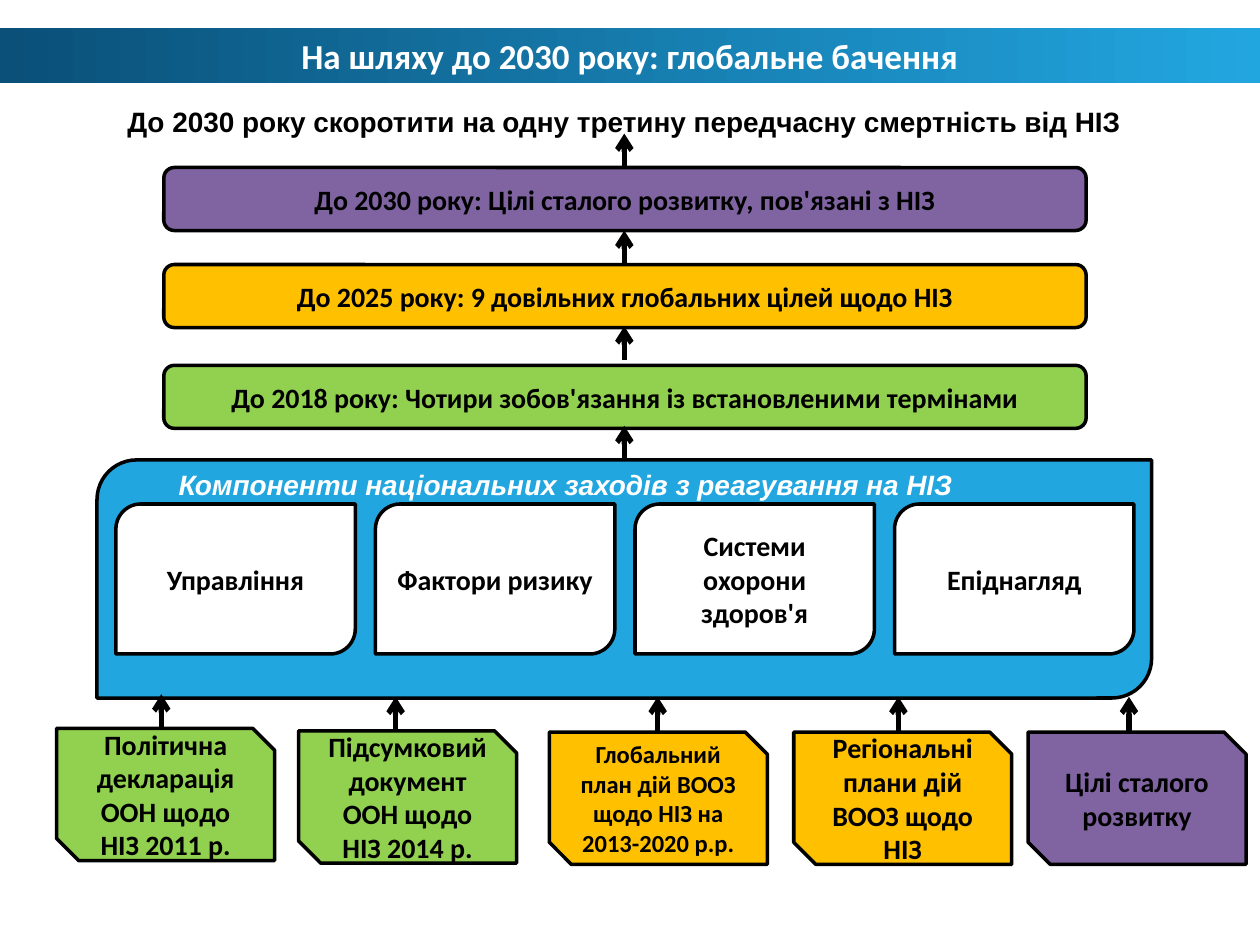
import dataclasses

import pptx
import pptx.dml.color
import pptx.enum.dml
import pptx.enum.shapes
import pptx.enum.text
import pptx.oxml
import pptx.util
from pptx.util import Inches

SHAPES = pptx.enum.shapes.MSO_SHAPE
ALIGN = pptx.enum.text.PP_ALIGN


@dataclasses.dataclass(frozen=True)
class Theme:
    """Colours, fonts and type sizes of the slide."""
    black: str = "000000"
    white: str = "FFFFFF"
    navy: str = "0A5079"
    blue: str = "22A6E0"
    purple: str = "8064A2"
    amber: str = "FFC000"
    green: str = "92D050"
    body_font: str = "Calibri"
    heading_font: str = "Arial"
    title_size: int = 20
    body_size: int = 16
    small_size: int = 14
    outline: int = 2
    arrow: int = 3


@dataclasses.dataclass(frozen=True)
class Box:
    """A rectangle in inches."""
    left: float
    top: float
    width: float
    height: float

    def inside(self, left, top, width, height):
        """Return a box offset from this one's top left corner."""
        return Box(self.left + left, self.top + top, width, height)

    def lengths(self):
        """Return the four measures as slide lengths."""
        return [Inches(value) for value in dataclasses.astuple(self)]


THEME = Theme()


def rgb(value):
    """Turn a hex string into a colour."""
    return pptx.dml.color.RGBColor.from_string(value)


def write(shape, text, size=THEME.body_size, font=THEME.body_font,
          color=THEME.black, align=ALIGN.CENTER, italic=None, wrap=True):
    """Set and format one bold paragraph in a shape."""
    frame = shape.text_frame
    frame.text = text
    frame.word_wrap = wrap
    paragraph = frame.paragraphs[0]
    paragraph.alignment = align
    run_font = paragraph.runs[0].font
    run_font.name, run_font.size = font, pptx.util.Pt(size)
    run_font.bold, run_font.italic = True, italic
    run_font.color.rgb = rgb(color)


def add_block(slide, kind, box, fill, text="", size=THEME.body_size):
    """Add an outlined shape with centred text."""
    shape = slide.shapes.add_shape(kind, *box.lengths())
    shape.shadow.inherit = False
    shape.fill.solid()
    shape.fill.fore_color.rgb = rgb(fill)
    shape.line.color.rgb = rgb(THEME.black)
    shape.line.width = pptx.util.Pt(THEME.outline)
    if text:
        write(shape, text, size)
        shape.text_frame.vertical_anchor = pptx.enum.text.MSO_ANCHOR.MIDDLE


def add_arrow(slide, x, bottom, length=0.27):
    """Add an upward arrow that starts at the given bottom point."""
    connector = slide.shapes.add_connector(
        pptx.enum.shapes.MSO_CONNECTOR.STRAIGHT,
        Inches(x), Inches(bottom), Inches(x), Inches(bottom - length))
    connector.line.color.rgb = rgb(THEME.black)
    connector.line.width = pptx.util.Pt(THEME.arrow)
    namespace = 'xmlns:a="http://schemas.openxmlformats.org/drawingml/2006/main"'
    connector.line._get_or_add_ln().append(
        pptx.oxml.parse_xml(f'<a:tailEnd {namespace} type="arrow"/>'))
    connector._element.spPr.append(
        pptx.oxml.parse_xml(f"<a:effectLst {namespace}/>"))


def add_title(slide, box):
    """Add the gradient title band."""
    band = slide.shapes.add_shape(SHAPES.RECTANGLE, *box.lengths())
    band.shadow.inherit = False
    band.line.fill.background()
    band.fill.gradient()
    band.fill.gradient_angle = 0
    for stop, color in zip(band.fill.gradient_stops, (THEME.navy, THEME.blue)):
        stop.color.rgb = rgb(color)
    write(band, "На шляху до 2030 року: глобальне бачення",
          THEME.title_size, color=THEME.white)


def add_milestones(slide, box):
    """Add the overall goal and the three dated steps leading up to it."""
    goal = slide.shapes.add_textbox(*box.inside(0, 0, box.width, 0.37).lengths())
    write(goal, "До 2030 року скоротити на одну третину передчасну смертність від НІЗ",
          font=THEME.heading_font)
    steps = [
        (0.55, THEME.purple, "До 2030 року: Цілі сталого розвитку, пов'язані з НІЗ"),
        (1.32, THEME.amber, "До 2025 року: 9 довільних глобальних цілей щодо НІЗ"),
        (2.12, THEME.green, "До 2018 року: Чотири зобов'язання із встановленими термінами"),
    ]
    for top, fill, text in steps:
        add_block(slide, SHAPES.ROUNDED_RECTANGLE,
                  box.inside(0.72, top, 7.32, 0.5), fill, text)
    for bottom in (0.55, 1.32, 2.08, 2.87):
        add_arrow(slide, box.left + box.width / 2, box.top + bottom)


def add_components(slide, box):
    """Add the panel with four equally spaced response components."""
    kind = SHAPES.ROUND_2_DIAG_RECTANGLE
    add_block(slide, kind, box, THEME.blue)
    names = ["Управління", "Фактори ризику", "Системи охорони здоров'я", "Епіднагляд"]
    for index, name in enumerate(names):
        add_block(slide, kind, box.inside(0.15 + index * 2.06, 0.35, 1.9, 1.19),
                  THEME.white, name)
    heading = slide.shapes.add_textbox(*box.inside(0.55, 0.01, 6.42, 0.37).lengths())
    write(heading, "Компоненти національних заходів з реагування на НІЗ",
          font=THEME.heading_font, color=THEME.white, align=ALIGN.LEFT,
          italic=True, wrap=False)


def add_foundations(slide, box):
    """Add the five source documents, each with an arrow to the panel."""
    documents = [
        (0, 0, 0.83, THEME.green, THEME.body_size,
         "Політична декларація ООН щодо НІЗ 2011 р."),
        (1.92, 0.02, 2.69, THEME.green, THEME.body_size,
         "Підсумковий документ ООН щодо НІЗ 2014 р."),
        (3.91, 0.03, 4.77, THEME.amber, THEME.small_size,
         "Глобальний план дій ВООЗ щодо НІЗ на 2013-2020 р.р."),
        (5.85, 0.03, 6.68, THEME.amber, THEME.body_size,
         "Регіональні плани дій ВООЗ щодо НІЗ"),
        (7.71, 0.03, 8.51, THEME.purple, THEME.body_size,
         "Цілі сталого розвитку"),
    ]
    for left, top, arrow_x, fill, size, text in documents:
        add_block(slide, SHAPES.SNIP_2_DIAG_RECTANGLE,
                  box.inside(left, top, 1.73, 1.05), fill, text, size)
        add_arrow(slide, box.left + arrow_x, box.top + min(top, 0.02))


def main():
    """Build and save the presentation."""
    presentation = pptx.Presentation()
    presentation.slide_width, presentation.slide_height = Inches(10), Inches(7.5)
    slide = presentation.slides.add_slide(presentation.slide_layouts[6])
    add_milestones(slide, Box(0.58, 0.78, 8.75, 2.87))
    add_components(slide, Box(0.77, 3.65, 8.37, 1.89))
    add_foundations(slide, Box(0.45, 5.78, 9.44, 1.08))
    add_title(slide, Box(0, 0.22, 10, 0.44))
    presentation.save("out.pptx")


if __name__ == "__main__":
    main()
